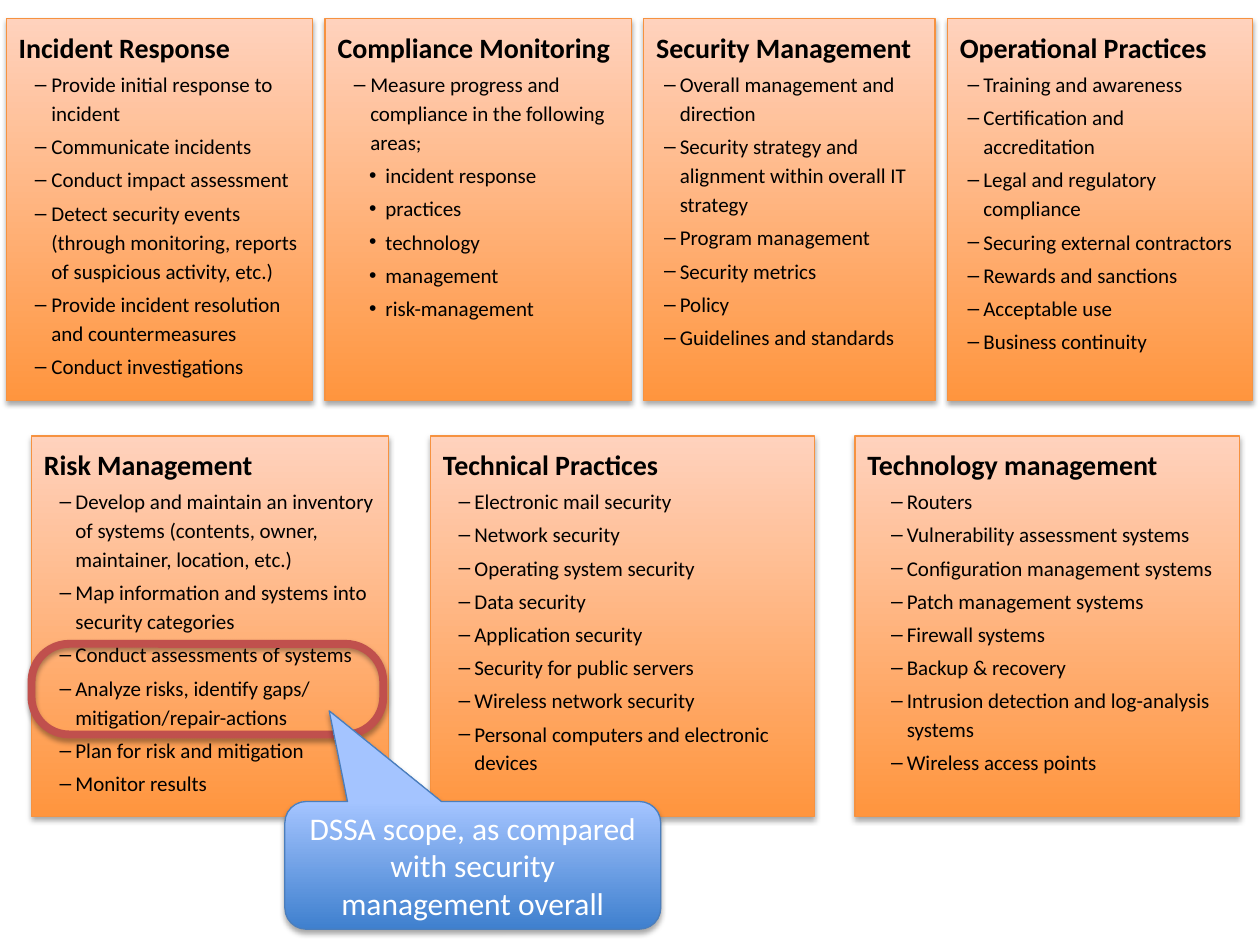
from lxml import etree
from pptx import Presentation
from pptx.dml.color import RGBColor
from pptx.enum.shapes import MSO_SHAPE
from pptx.enum.text import MSO_ANCHOR, PP_ALIGN
from pptx.oxml.ns import qn
from pptx.util import Pt

RECTANGLE = MSO_SHAPE.RECTANGLE
ROUNDED = MSO_SHAPE.ROUNDED_RECTANGLE
CALLOUT = MSO_SHAPE.ROUNDED_RECTANGULAR_CALLOUT
TOP, MIDDLE = MSO_ANCHOR.TOP, MSO_ANCHOR.MIDDLE
LEFT, CENTER = PP_ALIGN.LEFT, PP_ALIGN.CENTER

BLACK = RGBColor(0x00, 0x00, 0x00)
WHITE = RGBColor(0xFF, 0xFF, 0xFF)
ORANGE = RGBColor(0xFF, 0x95, 0x3E)
PEACH = RGBColor(0xFF, 0xD2, 0xBD)
ORANGE_LINE = RGBColor(0xF6, 0x92, 0x40)
BLUE = RGBColor(0x3F, 0x80, 0xCE)
LIGHT_BLUE = RGBColor(0xA4, 0xC4, 0xFF)
BLUE_LINE = RGBColor(0x4B, 0x7E, 0xBC)
RED = RGBColor(0xC0, 0x50, 0x4D)

TOP_ROW = (10.8, 218.2)
BOTTOM_ROW = (249.1, 217.4)

# Panels: row, left, width, text indent, hanging indent, heading, items, sub-items
PANELS = [
    (TOP_ROW, 3.6, 175, 18.7, 9.4, "Incident Response", [
        "Provide initial response to incident",
        "Communicate incidents",
        "Conduct impact assessment",
        "Detect security events (through monitoring, reports of suspicious activity, etc.)",
        "Provide incident resolution and countermeasures",
        "Conduct investigations"], []),
    (TOP_ROW, 185.8, 175, 18.7, 9.4, "Compliance Monitoring", [
        "Measure progress and compliance in the following areas;"], [
        "incident response", "practices", "technology", "management",
        "risk-management"]),
    (TOP_ROW, 367.9, 166.5, 13.5, 9, "Security Management", [
        "Overall management and direction",
        "Security strategy and alignment within overall IT strategy",
        "Program management",
        "Security metrics",
        "Policy",
        "Guidelines and standards"], []),
    (TOP_ROW, 541.4, 174.4, 13.5, 9, "Operational Practices", [
        "Training and awareness",
        "Certification and accreditation",
        "Legal and regulatory compliance",
        "Securing external contractors",
        "Rewards and sanctions",
        "Acceptable use",
        "Business continuity"], []),
    (BOTTOM_ROW, 18, 204, 18, 9, "Risk Management", [
        "Develop and maintain an inventory of systems (contents, owner, maintainer, location, etc.)",
        "Map information and systems into security categories",
        "Conduct assessments of systems",
        "Analyze risks, identify gaps/ mitigation/repair-actions",
        "Plan for risk and mitigation",
        "Monitor results"], []),
    (BOTTOM_ROW, 246, 219.6, 18, 9, "Technical Practices", [
        "Electronic mail security",
        "Network security",
        "Operating system security",
        "Data security",
        "Application security",
        "Security for public servers",
        "Wireless network security",
        "Personal computers and electronic devices"], []),
    (BOTTOM_ROW, 488.6, 219.6, 22.5, 9, "Technology management", [
        "Routers",
        "Vulnerability assessment systems",
        "Configuration management systems",
        "Patch management systems",
        "Firewall systems",
        "Backup & recovery",
        "Intrusion detection and log-analysis systems",
        "Wireless access points"], []),
]
SUB_INDENT = 27.4


def add_box(kind, left, top, width, height, line_color, line_width, gradient=None):
    """Add a shape with an optional bottom-to-top gradient and a soft shadow."""
    shape = slide.shapes.add_shape(kind, Pt(left), Pt(top), Pt(width), Pt(height))
    if gradient:
        shape.fill.gradient()
        shape.fill.gradient_angle = 90
        for stop, color, position in zip(shape.fill.gradient_stops, gradient, (0, 1)):
            stop.color.rgb = color
            stop.position = position
    else:
        shape.fill.background()
    shape.line.color.rgb = line_color
    shape.line.width = Pt(line_width)
    shape.shadow.inherit = False
    effects = shape.element.spPr.find(qn("a:effectLst"))
    shadow = etree.SubElement(effects, qn("a:outerShdw"), blurRad=str(Pt(3.15)),
                              dist=str(Pt(1.8)), dir="5400000", rotWithShape="0")
    shadow_color = etree.SubElement(shadow, qn("a:srgbClr"), val="000000")
    etree.SubElement(shadow_color, qn("a:alpha"), val="35000")
    return shape


def format_paragraph(paragraph, text, size, color, alignment, bold=False):
    paragraph.text = text
    paragraph.alignment = alignment
    font = paragraph.runs[0].font
    font.name = "Calibri"
    font.size = Pt(size)
    font.bold = bold
    font.color.rgb = color


presentation = Presentation()
presentation.slide_width = Pt(720)
presentation.slide_height = Pt(540)
slide = presentation.slides.add_slide(presentation.slide_layouts[6])

# Panels with a heading and a bulleted list
for (top, height), left, width, indent, hanging, heading, items, sub_items in PANELS:
    panel = add_box(RECTANGLE, left, top, width, height, ORANGE_LINE, 0.75,
                    (ORANGE, PEACH))
    text_frame = panel.text_frame
    text_frame.word_wrap = True
    text_frame.vertical_anchor = TOP
    entries = [(heading, 0, 0, None)]
    entries += [(item, 1, indent, "–") for item in items]
    entries += [(item, 2, SUB_INDENT, "•") for item in sub_items]
    for text, level, margin, bullet in entries:
        paragraph = text_frame.add_paragraph() if level else text_frame.paragraphs[0]
        size = 12 if level else 16
        format_paragraph(paragraph, text, size, BLACK, LEFT, bold=level == 0)
        paragraph.level = level
        paragraph.line_spacing = 1.15
        paragraph.space_before = Pt(0.2 * size)
        if bullet:
            properties = paragraph._p.get_or_add_pPr()
            properties.set("marL", str(Pt(margin)))
            properties.set("indent", str(Pt(-hanging)))
            etree.SubElement(properties, qn("a:buFont"), typeface="Arial")
            etree.SubElement(properties, qn("a:buChar"), char=bullet)

# Ring around the items in scope
ring = add_box(ROUNDED, 18, 367.9, 201, 51.8, RED, 4.5)
ring.adjustments[0] = 0.417

# Callout that explains the ring
callout = add_box(CALLOUT, 162.8, 458, 214.8, 73, BLUE_LINE, 0.75, (BLUE, LIGHT_BLUE))
for index, value in enumerate((-0.382, -1.21, 0.167)):
    callout.adjustments[index] = value
callout.text_frame.word_wrap = True
callout.text_frame.vertical_anchor = MIDDLE
format_paragraph(callout.text_frame.paragraphs[0],
                 "DSSA scope, as compared with security management overall",
                 18, WHITE, CENTER)

presentation.save("out.pptx")
